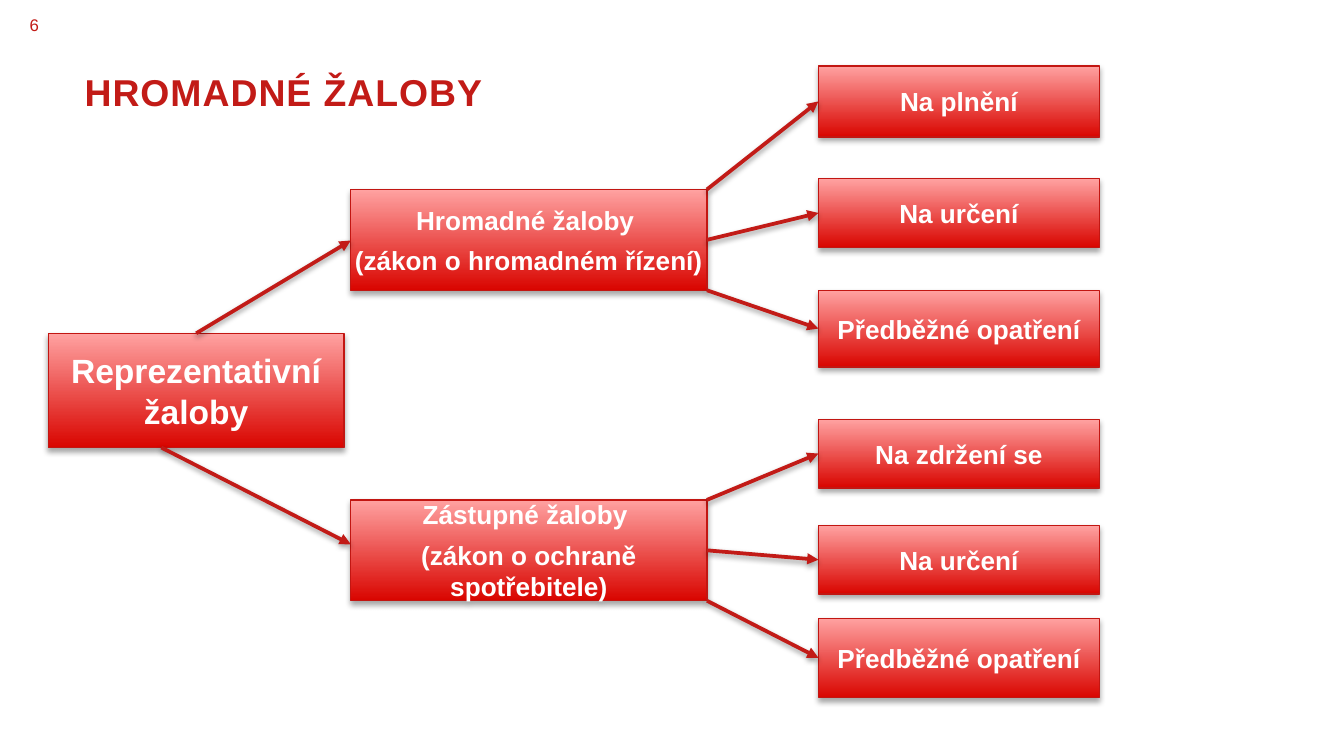
from lxml.etree import SubElement
from pptx import Presentation
from pptx.dml.color import RGBColor
from pptx.enum.shapes import MSO_CONNECTOR as Connector, MSO_SHAPE as Shape
from pptx.enum.text import MSO_ANCHOR as Anchor, PP_ALIGN as Align
from pptx.oxml.ns import qn
from pptx.util import Inches, Pt

PAGE_NUMBER = "6"
TITLE = "HROMADNÉ ŽALOBY"
ROOT = {"lines": ["Reprezentativní žaloby"], "box": (0.36, 2.48, 2.2, 0.85)}
BRANCHES = [
    {"lines": ["Hromadné žaloby ", "(zákon o hromadném řízení)"],
     "top": 1.41, "exit": (1.46, 2.48), "entry": 1.79,
     "leaves": [("Na plnění", 0.49, 0.53), ("Na určení", 1.33, 0.51),
                ("Předběžné opatření", 2.16, 0.57)]},
    {"lines": ["Zástupné žaloby ", "(zákon o ochraně spotřebitele)"],
     "top": 3.72, "exit": (1.2, 3.33), "entry": 4.05,
     "leaves": [("Na zdržení se", 3.12, 0.51), ("Na určení", 3.91, 0.51),
                ("Předběžné opatření", 4.6, 0.59)]},
]
SLIDE_WIDTH = 10
SLIDE_HEIGHT = SLIDE_WIDTH * 9 / 16
BRANCH_LEFT, BRANCH_WIDTH, BRANCH_HEIGHT = 2.61, 2.65, 0.75
LEAF_LEFT, LEAF_WIDTH = 6.09, 2.09

THEME = {
    "font": "Arial",
    "accent": RGBColor.from_string("C21B17"),
    "border": RGBColor.from_string("C21612"),
    "gradient": [RGBColor.from_string(c) for c in ("D90500", "FFA2A1")],
    "text": RGBColor.from_string("FFFFFF"),
    "number": 9, "title": 20, "root": 18, "node": 14,
    "box_shadow": (35, 3.1, 1.8), "arrow_shadow": (38, 3.1, 1.6),
}


def apply(target, values):
    for key, value in values.items():
        setattr(target, key, value)


def write(holder, lines, size, color, bold, flush, anchor, **paragraph_format):
    frame = holder.text_frame
    apply(frame, {"word_wrap": True, "vertical_anchor": anchor})
    if flush:
        sides = ("left", "top", "right", "bottom")
        apply(frame, {f"margin_{side}": 0 for side in sides})
    for index, line in enumerate(lines):
        paragraph = frame.paragraphs[0] if index == 0 else frame.add_paragraph()
        apply(paragraph, paragraph_format)
        run = paragraph.add_run()
        run.text = line
        apply(run.font, {"name": THEME["font"], "size": Pt(size), "bold": bold})
        run.font.color.rgb = color
    return frame


def add_shadow(properties, opacity, blur, distance):
    effects = properties.find(qn("a:effectLst"))
    if effects is None:
        effects = SubElement(properties, qn("a:effectLst"))
    shadow = SubElement(effects, qn("a:outerShdw"), blurRad=str(Pt(blur)),
                        dist=str(Pt(distance)), dir="5400000", rotWithShape="0")
    black = SubElement(shadow, qn("a:srgbClr"), val="000000")
    SubElement(black, qn("a:alpha"), val=str(opacity * 1000))


def add_node(slide, lines, box, size, flush=False, space_after=0):
    node = slide.shapes.add_shape(Shape.FLOWCHART_PROCESS, *map(Inches, box))
    node.fill.gradient()
    node.fill.gradient_angle = 90
    for stop, color in zip(node.fill.gradient_stops, THEME["gradient"]):
        stop.color.rgb = color
    node.line.color.rgb = THEME["border"]
    node.line.width = Pt(0.75)
    node.shadow.inherit = False
    add_shadow(node._element.spPr, *THEME["box_shadow"])
    write(node, lines, size, THEME["text"], True, flush, Anchor.MIDDLE,
          alignment=Align.CENTER, space_after=Pt(space_after))


def add_arrow(slide, start, end):
    arrow = slide.shapes.add_connector(Connector.STRAIGHT,
                                       *map(Inches, (*start, *end)))
    arrow.line.color.rgb = THEME["accent"]
    arrow.line.width = Pt(2)
    SubElement(arrow.line._get_or_add_ln(), qn("a:tailEnd"), type="triangle")
    add_shadow(arrow._element.spPr, *THEME["arrow_shadow"])


def add_label(slide, text, box, size, bold, anchor, **paragraph_format):
    label = slide.shapes.add_textbox(*map(Inches, box))
    return write(label, [text], size, THEME["accent"], bold, True, anchor,
                 **paragraph_format)


def main():
    deck = Presentation()
    apply(deck, {"slide_width": Inches(SLIDE_WIDTH),
                 "slide_height": Inches(SLIDE_HEIGHT)})
    slide = deck.slides.add_slide(deck.slide_layouts[6])

    add_label(slide, PAGE_NUMBER, (0.22, 0.1, 0.41, 0.17), THEME["number"],
              False, Anchor.MIDDLE)
    heading = add_label(slide, TITLE, (0.63, 0.57, 8.66, 0.64), THEME["title"],
                        True, Anchor.TOP, line_spacing=Pt(20))
    heading.paragraphs[0].runs[0].font._element.set("spc", "50")

    add_node(slide, ROOT["lines"], ROOT["box"], THEME["root"])
    arrows = []
    for branch in BRANCHES:
        top = branch["top"]
        add_node(slide, branch["lines"],
                 (BRANCH_LEFT, top, BRANCH_WIDTH, BRANCH_HEIGHT),
                 THEME["node"], flush=True, space_after=5)
        arrows.append((branch["exit"], (BRANCH_LEFT, branch["entry"])))
        for index, (text, leaf_top, height) in enumerate(branch["leaves"]):
            add_node(slide, [text], (LEAF_LEFT, leaf_top, LEAF_WIDTH, height),
                     THEME["node"])
            start = (BRANCH_LEFT + BRANCH_WIDTH, top + index * BRANCH_HEIGHT / 2)
            arrows.append((start, (LEAF_LEFT, leaf_top + height / 2)))
    for start, end in arrows:
        add_arrow(slide, start, end)

    deck.save("out.pptx")


if __name__ == "__main__":
    main()
